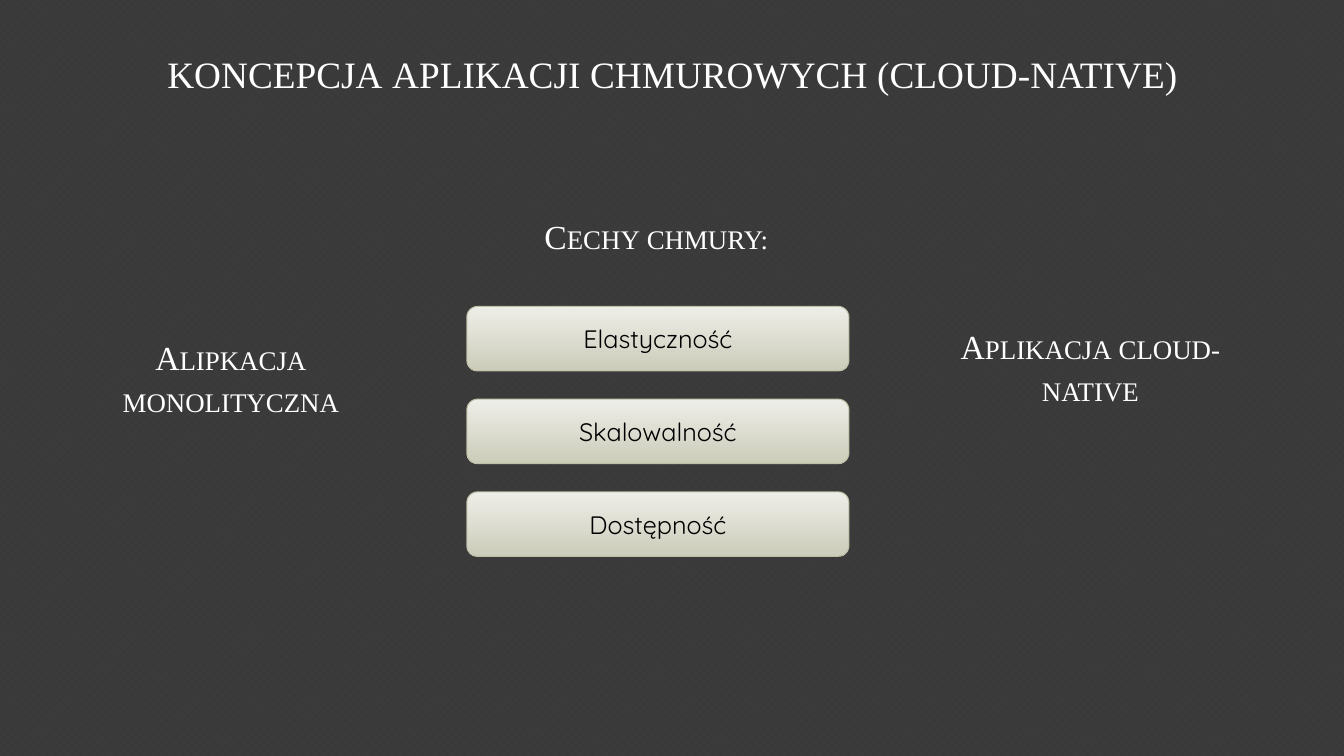
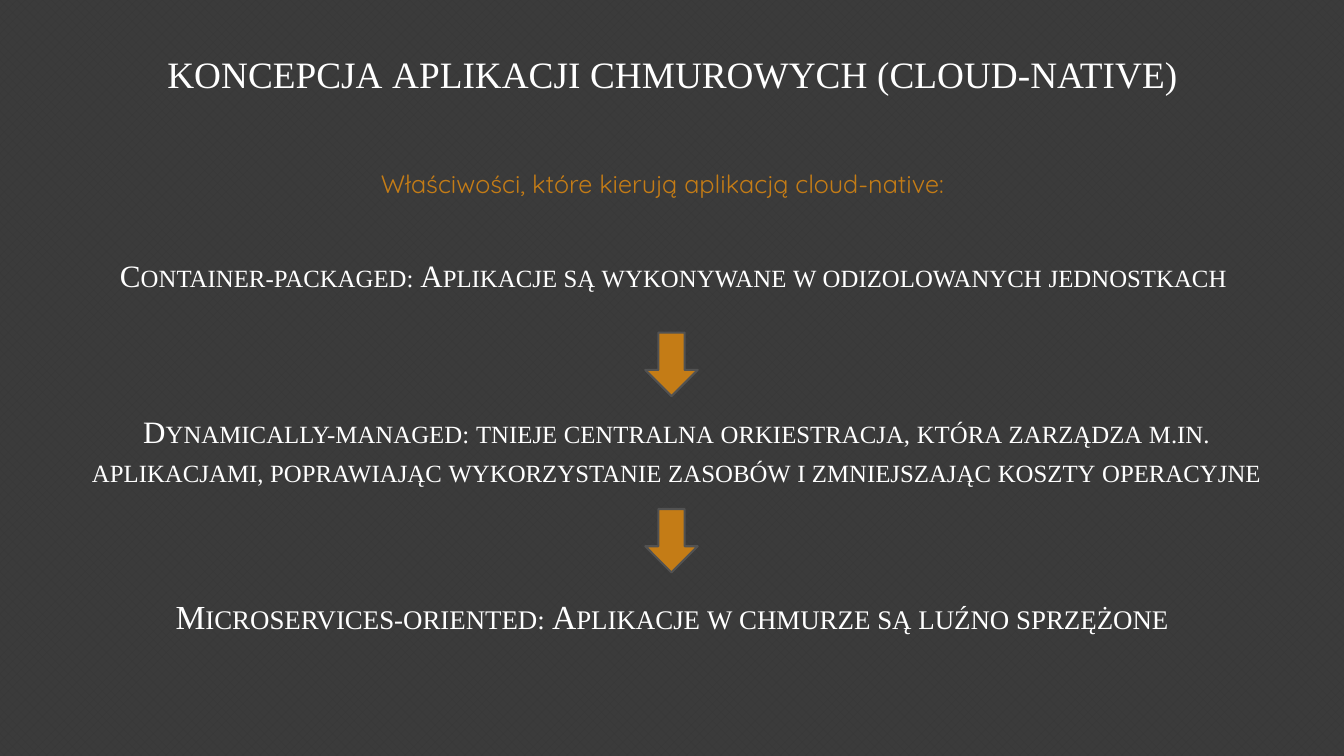
import dataclasses
import lxml.etree
import pptx
import pptx.dml.color
import pptx.enum.dml
import pptx.enum.shapes
import pptx.enum.text
import pptx.oxml.ns
import pptx.util

Inches = pptx.util.Inches
Pt = pptx.util.Pt
Shape = pptx.enum.shapes.MSO_SHAPE
Align = pptx.enum.text.PP_ALIGN
qn = pptx.oxml.ns.qn

COLORS = {
    "dot": "383838", "back": "3B3B3B", "white": "FFFFFF", "black": "000000",
    "light": "EEEEE8", "dark": "CCCCBA", "edge": "BFBFA5",
    "orange": "C47C16", "gray": "525252",
}
SERIF = "Times New Roman"
SANS = "Quicksand"
TITLE = "koncepcja aplikacji chmurowych (cloud-native)"


@dataclasses.dataclass(frozen=True)
class Label:
    text: str
    left: float
    top: float
    width: float
    height: float
    size: float = 24
    before: float = 3.6


HEAD = Label(TITLE, 1.23, 0.34, 10.88, 0.65, 33.3)
TRAITS = ("Elastyczność", "Skalowalność", "Dostępność")
TOPICS = (
    Label("Cechy chmury:", 4.82, 2.07, 3.38, 0.66),
    Label("Alipkacja monolityczna", 0.83, 3.27, 2.92, 0.96),
    Label("Aplikacja cloud-native", 9.39, 3.16, 2.85, 1.18),
)
STEPS = (
    Label("Container-packaged: Aplikacje są wykonywane w odizolowanych jednostkach",
          0.88, 2.48, 11.6, 0.75, 22.2, 2),
    Label("Dynamically-managed: tnieje centralna orkiestracja, która zarządza m.in.\n"
          "aplikacjami, poprawiając wykorzystanie zasobów i zmniejszając koszty operacyjne",
          0.79, 4.02, 11.84, 1.03, 22.2, 2),
    Label("Microservices-oriented: Aplikacje w chmurze są luźno sprzężone",
          0.97, 5.84, 11.39, 0.85),
)


def rgb(name: str) -> pptx.dml.color.RGBColor:
    return pptx.dml.color.RGBColor.from_string(COLORS[name])


def glow(font) -> None:
    """Give the run small capitals and a soft shadow."""
    props = font._element
    props.set("cap", "small")
    effects = lxml.etree.Element(qn("a:effectLst"))
    shade = lxml.etree.SubElement(effects, qn("a:outerShdw"), blurRad="38100",
                                  dist="25400", dir="2700000")
    tone = lxml.etree.SubElement(shade, qn("a:srgbClr"), val=COLORS["black"])
    lxml.etree.SubElement(tone, qn("a:alpha"), val="40000")
    props.find(qn("a:solidFill")).addnext(effects)


def write(shape, text: str, *, size: float = 18, face: str = SANS,
          color: str = "white", align=Align.CENTER, before: float = 0,
          lead: float = 1, caps: bool = False) -> None:
    frame = shape.text_frame
    frame.word_wrap = True
    for i, line in enumerate(text.split("\n")):
        para = frame.add_paragraph() if i else frame.paragraphs[0]
        para.alignment = align
        para.space_before = Pt(0 if i else before)
        para.line_spacing = lead
        run = para.add_run()
        run.text = line
        run.font.size = Pt(size)
        run.font.name = face
        run.font.color.rgb = rgb(color)
        if caps:
            glow(run.font)


def place(slide, item: Label) -> None:
    box = slide.shapes.add_textbox(Inches(item.left), Inches(item.top),
                                   Inches(item.width), Inches(item.height))
    write(box, item.text, size=item.size, face=SERIF, before=item.before,
          lead=1.05, caps=True)


def draw(slide, kind, left: float, top: float, width: float, height: float,
         edge: str, weight: float):
    shape = slide.shapes.add_shape(kind, Inches(left), Inches(top),
                                   Inches(width), Inches(height))
    shape.shadow.inherit = False
    shape.line.color.rgb = rgb(edge)
    shape.line.width = Pt(weight)
    return shape


def start(deck):
    """Add a slide with the shared title."""
    slide = deck.slides.add_slide(deck.slide_layouts[6])
    place(slide, HEAD)
    return slide


def traits(deck) -> None:
    slide = start(deck)
    for i, text in enumerate(TRAITS):
        card = draw(slide, Shape.ROUNDED_RECTANGLE, 4.63, 3.04 + i * 0.92,
                    3.79, 0.64, "edge", 0.75)
        card.fill.gradient()
        card.fill.gradient_angle = 270
        for stop, name in zip(card.fill.gradient_stops, ("light", "dark")):
            stop.color.rgb = rgb(name)
        card.text_frame.vertical_anchor = pptx.enum.text.MSO_ANCHOR.MIDDLE
        write(card, text, color="black")
    for item in TOPICS:
        place(slide, item)


def steps(deck) -> None:
    slide = start(deck)
    for item in STEPS:
        place(slide, item)
    for i in range(len(STEPS) - 1):
        arrow = draw(slide, Shape.DOWN_ARROW, 6.4, 3.3 + i * 1.75,
                     0.52, 0.63, "gray", 1.5)
        arrow.fill.solid()
        arrow.fill.fore_color.rgb = rgb("orange")
    intro = slide.shapes.add_textbox(Inches(3.68), Inches(1.62),
                                     Inches(6.47), Inches(0.4))
    write(intro, "Właściwości, które kierują aplikacją cloud-native:",
          color="orange", align=Align.LEFT)


def main() -> None:
    deck = pptx.Presentation()
    deck.slide_width = Inches(13.33)
    deck.slide_height = Inches(7.5)
    fill = deck.slide_master.background.fill
    fill.patterned()
    fill.pattern = pptx.enum.dml.MSO_PATTERN.from_xml("pct40")
    fill.fore_color.rgb = rgb("dot")
    fill.back_color.rgb = rgb("back")
    traits(deck)
    steps(deck)
    deck.save("out.pptx")


if __name__ == "__main__":
    main()
